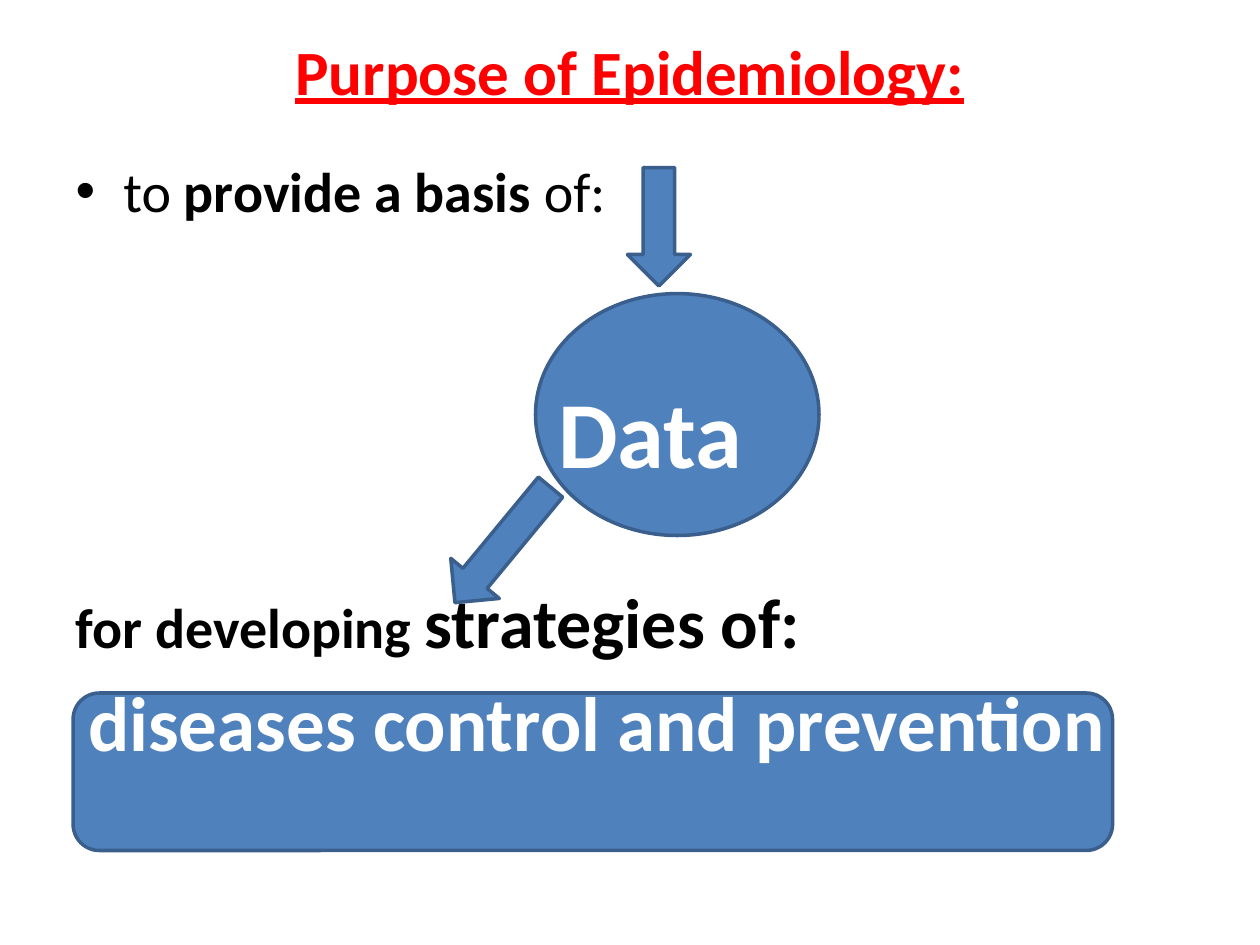
import pptx
import pptx.util
import pptx.dml.color
import pptx.enum.shapes
import pptx.enum.text
import pptx.oxml.ns
import lxml.etree

Inches, Pt = pptx.util.Inches, pptx.util.Pt
RGBColor = pptx.dml.color.RGBColor
SHAPE = pptx.enum.shapes.MSO_SHAPE
ANCHOR = pptx.enum.text.MSO_ANCHOR

RED = RGBColor(0xFF, 0x00, 0x00)
BLACK = RGBColor(0x00, 0x00, 0x00)
WHITE = RGBColor(0xFF, 0xFF, 0xFF)
BLUE = RGBColor(0x4F, 0x81, 0xBD)
DARK_BLUE = RGBColor(0x3A, 0x5F, 0x8C)
FONT = "Calibri"

# Content
TITLE = "Purpose of Epidemiology:"
# (bullet, left margin in inches, space before in points, runs of (text, size, bold, colour))
STEPS = [
    ("•", 0.38, 0, [("to ", 32, False, BLACK),
                    ("provide a basis ", 32, True, BLACK),
                    ("of:", 32, False, BLACK)]),
    (None, 3.83, 86, [("Data", 54, True, WHITE)]),
    (None, 0, 52, [("for developing ", 32, True, BLACK),
                   ("strategies of:", 40, True, BLACK)]),
    (None, 0.1, 7, [("diseases control and prevention", 44, True, WHITE)]),
]
# (preset, left, top, width, height, rotation)
BACKDROPS = [
    (SHAPE.ROUNDED_RECTANGLE, 0.58, 5.5, 8.25, 1.25, 0),
    (SHAPE.OVAL, 4.25, 2.33, 2.25, 1.92, 0),
]
ARROWS = [
    (SHAPE.DOWN_ARROW, 4.98, 1.33, 0.5, 0.94, 0),
    (SHAPE.DOWN_ARROW, 3.74, 3.73, 0.5, 1.19, 39.6),
]


def place(holder, left, top, width, height):
    holder.left, holder.top = Inches(left), Inches(top)
    holder.width, holder.height = Inches(width), Inches(height)


def add_run(paragraph, text, size, bold, color):
    run = paragraph.add_run()
    run.text = text
    run.font.name = FONT
    run.font.size = Pt(size)
    run.font.bold = bold
    run.font.color.rgb = color
    return run


def add_blue_shape(slide, preset, left, top, width, height, rotation):
    shape = slide.shapes.add_shape(
        preset, Inches(left), Inches(top), Inches(width), Inches(height))
    shape.rotation = rotation
    shape.shadow.inherit = False
    shape.fill.solid()
    shape.fill.fore_color.rgb = BLUE
    shape.line.color.rgb = DARK_BLUE
    shape.line.width = Pt(2)
    return shape


def set_bullet(paragraph, bullet, margin):
    props = paragraph._p.get_or_add_pPr()
    props.set("marL", str(Inches(margin)))
    props.set("indent", str(-Inches(margin) if bullet else 0))
    tag = "a:buChar" if bullet else "a:buNone"
    mark = lxml.etree.SubElement(props, pptx.oxml.ns.qn(tag))
    if bullet:
        mark.set("char", bullet)


def main():
    deck = pptx.Presentation()
    deck.slide_width, deck.slide_height = Inches(10), Inches(7.5)
    slide = deck.slides.add_slide(deck.slide_layouts.get_by_name("Title and Content"))
    title, body = slide.placeholders

    # Title
    place(title, 0.5, 0.18, 9, 0.75)
    title.text_frame.vertical_anchor = ANCHOR.MIDDLE
    title.text_frame.auto_size = pptx.enum.text.MSO_AUTO_SIZE.NONE
    heading = title.text_frame.paragraphs[0]
    heading.alignment = pptx.enum.text.PP_ALIGN.CENTER
    add_run(heading, TITLE, 36, True, RED).font.underline = True

    # Steps of the flow
    place(body, 0.5, 1.19, 9, 5.65)
    frame = body.text_frame
    frame.vertical_anchor = ANCHOR.TOP
    frame.auto_size = pptx.enum.text.MSO_AUTO_SIZE.NONE
    for index, (bullet, margin, gap, runs) in enumerate(STEPS):
        step = frame.add_paragraph() if index else frame.paragraphs[0]
        step.space_before = Pt(gap)
        set_bullet(step, bullet, margin)
        for run in runs:
            add_run(step, *run)

    # Backdrops go behind the text, arrows in front of it
    for backdrop in BACKDROPS:
        shape = add_blue_shape(slide, *backdrop)
        title._element.addprevious(shape._element)
    for arrow in ARROWS:
        add_blue_shape(slide, *arrow)

    deck.save("out.pptx")


if __name__ == "__main__":
    main()
